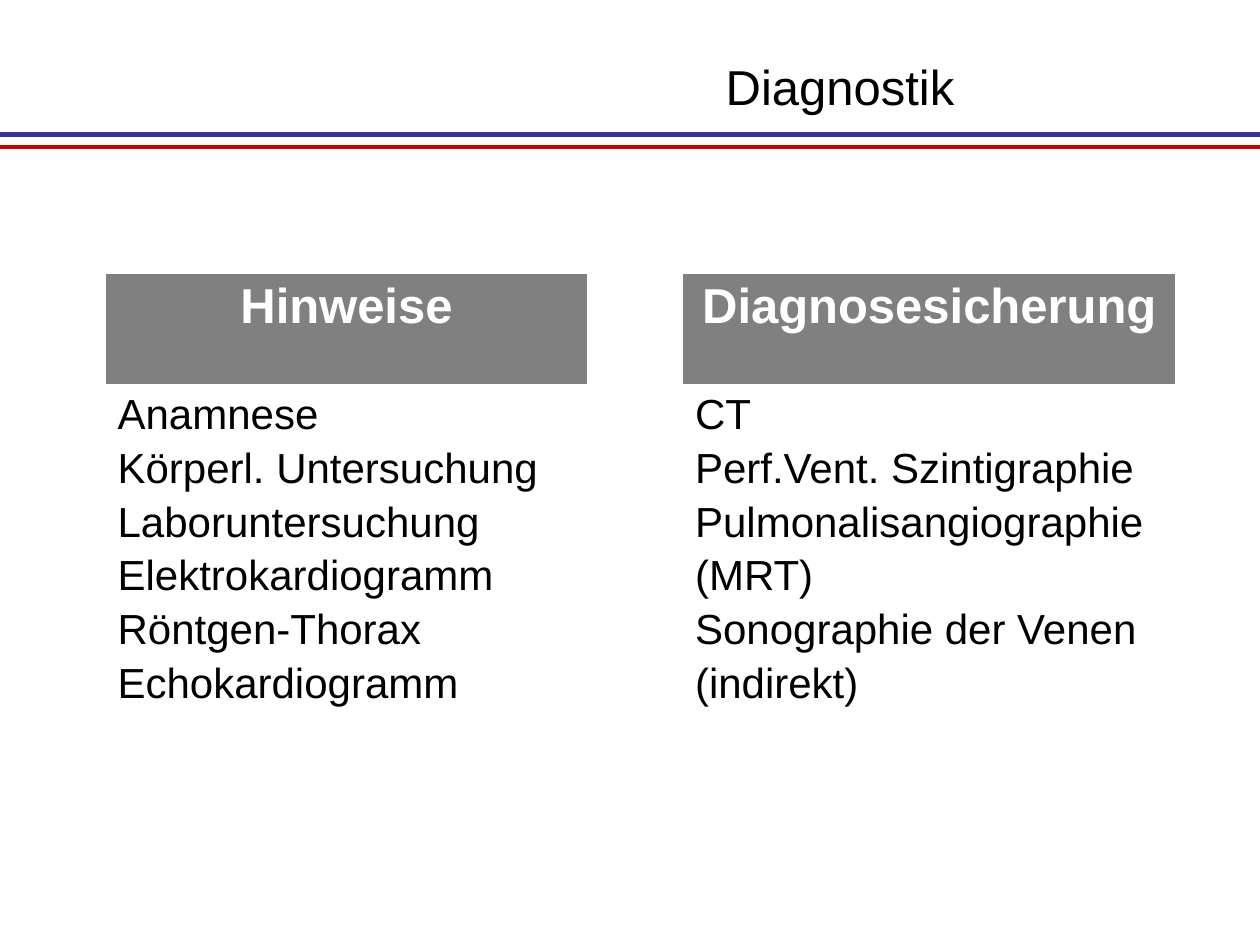
from lxml.etree import SubElement
from pptx import Presentation
from pptx.dml.color import RGBColor
from pptx.enum.shapes import MSO_CONNECTOR
from pptx.enum.text import MSO_ANCHOR, PP_ALIGN
from pptx.oxml import parse_xml
from pptx.oxml.ns import nsdecls, qn
from pptx.util import Inches, Pt

BLACK = RGBColor(0x00, 0x00, 0x00)
WHITE = RGBColor(0xFF, 0xFF, 0xFF)
GRAY = RGBColor(0x80, 0x80, 0x80)
BLUE = RGBColor(0x33, 0x33, 0x99)
RED = RGBColor(0xCC, 0x00, 0x00)

# The grid has 12 columns and 9 rows, each 5/6 inch.
COLUMNS, ROWS = 12, 9
HEADER_ROW, BODY_ROW = 0.89, 2.22

LISTS = [
    (1, 4.6, "Hinweise",
     ["Anamnese", "Körperl. Untersuchung", "Laboruntersuchung",
      "Elektrokardiogramm", "Röntgen-Thorax", "Echokardiogramm"]),
    (6.5, 4.7, "Diagnosesicherung",
     ["CT", "Perf.Vent. Szintigraphie", "Pulmonalisangiographie",
      "(MRT)", "Sonographie der Venen", "(indirekt)"]),
]


class DiagnosisSlide:
    font_name = "Arial"
    heading_size = Pt(28)
    body_size = Pt(24)
    paragraph_gap = Pt(4)

    def __init__(self, presentation):
        self.slide = presentation.slides.add_slide(presentation.slide_layouts[6])
        self.column = presentation.slide_width / COLUMNS
        self.row = presentation.slide_height / ROWS

    def place(self, left, top, width, height):
        """Turn grid columns and rows into lengths."""
        return (round(left * self.column), round(top * self.row),
                round(width * self.column), round(height * self.row))

    def fill_text(self, frame, lines, size, color, bold=False, align=PP_ALIGN.LEFT):
        frame.text = "\n".join(lines)
        for paragraph in frame.paragraphs:
            paragraph.alignment = align
            paragraph.space_before = self.paragraph_gap
            paragraph.font.name = self.font_name
            paragraph.font.size = size
            paragraph.font.bold = bold
            paragraph.font.color.rgb = color

    def title(self, text, *area):
        box = self.slide.shapes.add_textbox(*self.place(*area))
        box.text_frame.word_wrap = True
        box.text_frame.vertical_anchor = MSO_ANCHOR.MIDDLE
        self.fill_text(box.text_frame, [text], self.heading_size, BLACK,
                       align=PP_ALIGN.CENTER)

    def rule(self, start, end, top, color):
        left, y, right, _ = self.place(start, top, end, 0)
        line = self.slide.shapes.add_connector(
            MSO_CONNECTOR.STRAIGHT, left, y, right, y)
        line.line.color.rgb = color
        line.line.width = Pt(2.5)
        SubElement(line._element.spPr, qn("a:effectLst"))

    def border(self, cell):
        properties = cell._tc.get_or_add_tcPr()
        for position, side in enumerate(("lnL", "lnR", "lnT", "lnB")):
            properties.insert(position, parse_xml(
                f'<a:{side} {nsdecls("a")} w="{Pt(1)}"><a:solidFill>'
                f'<a:srgbClr val="{WHITE}"/></a:solidFill></a:{side}>'))

    def list_table(self, heading, entries, *area):
        table = self.slide.shapes.add_table(2, 1, *self.place(*area)).table
        table.rows[0].height = Inches(HEADER_ROW)
        table.rows[1].height = Inches(BODY_ROW)
        header, body = table.cell(0, 0), table.cell(1, 0)
        header.fill.solid()
        header.fill.fore_color.rgb = GRAY
        body.fill.background()
        self.fill_text(header.text_frame, [heading], self.heading_size, WHITE,
                       bold=True, align=PP_ALIGN.CENTER)
        self.fill_text(body.text_frame, entries, self.body_size, BLACK)
        for cell in (header, body):
            self.border(cell)


def main():
    presentation = Presentation()
    presentation.slide_width = Inches(10)
    presentation.slide_height = Inches(7.5)
    page = DiagnosisSlide(presentation)
    for top, color in ((1.28, BLUE), (1.4, RED)):
        for start, end in ((0, 10.16), (1.84, COLUMNS)):
            page.rule(start, end, top, color)
    page.title("Diagnostik", 2.6, 0.07, 10.8, 1.5)
    for left, width, heading, entries in LISTS:
        page.list_table(heading, entries, left, 2.6, width, 4.55)
    presentation.save("out.pptx")


if __name__ == "__main__":
    main()
